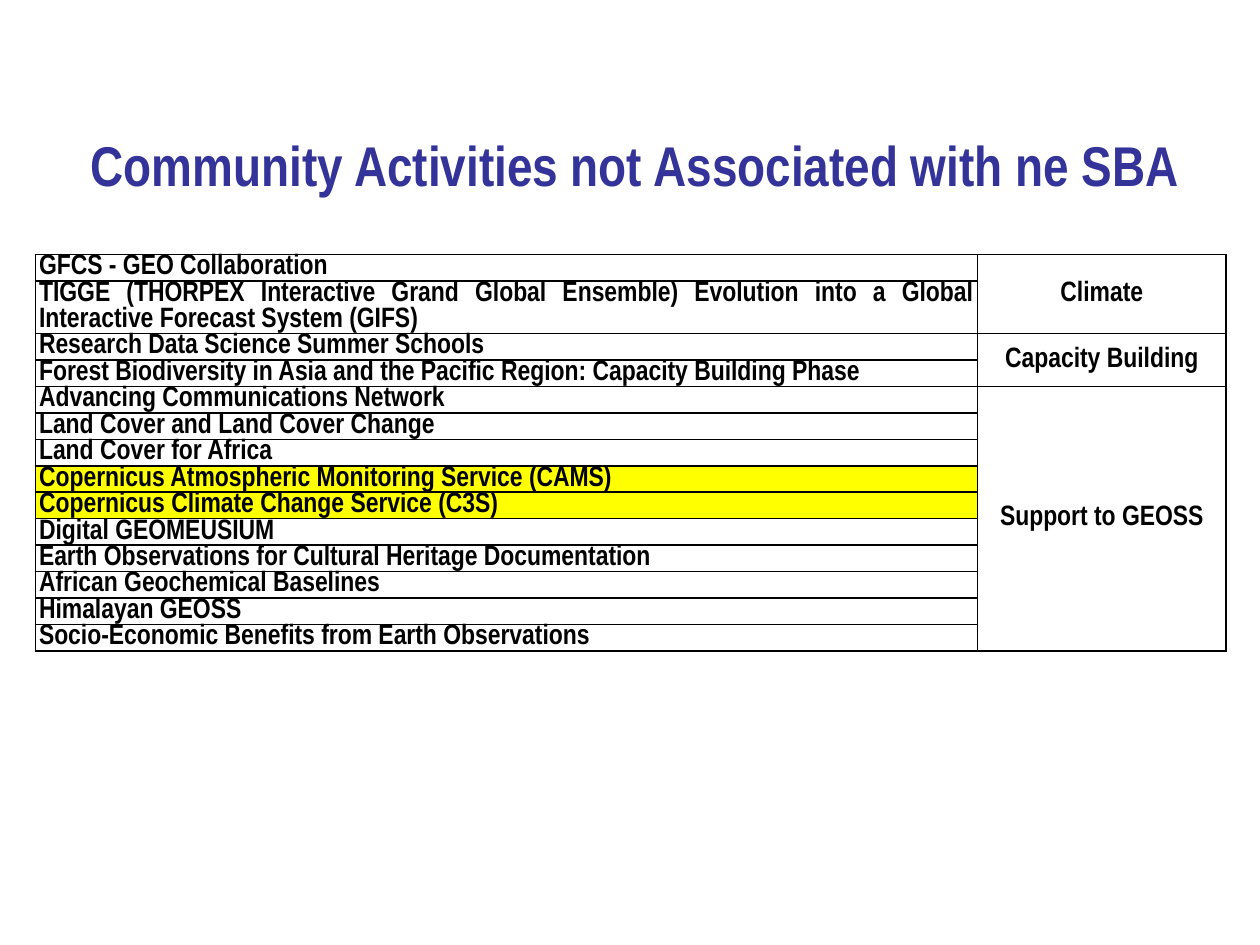
import pptx
import pptx.util
import pptx.dml.color
import pptx.enum.text
import pptx.oxml
import pptx.oxml.ns
from dataclasses import dataclass

Inches = pptx.util.Inches
Align = pptx.enum.text.PP_ALIGN
Anchor = pptx.enum.text.MSO_ANCHOR


@dataclass(frozen=True)
class Theme:
    font: str = "Arial Narrow"
    title: str = "333399"
    ink: str = "000000"
    plain: str = "FFFFFF"
    highlight: str = "FFFF00"
    title_size: int = 32
    cell_size: int = 16
    border: int = 1


theme = Theme()


def write(frame, text, align, size, color):
    para = frame.paragraphs[0]
    para.alignment = align
    span = para.add_run()
    span.text = text
    span.font.name = theme.font
    span.font.size = pptx.util.Pt(size)
    span.font.bold = True
    span.font.color.rgb = pptx.dml.color.RGBColor.from_string(color)


def style_cell(cell, fill):
    cell.margin_left = cell.margin_right = Inches(0.03)
    cell.margin_top = cell.margin_bottom = 0
    cell.fill.solid()
    cell.fill.fore_color.rgb = pptx.dml.color.RGBColor.from_string(fill)
    properties = cell._tc.get_or_add_tcPr()
    for position, side in enumerate(("lnL", "lnR", "lnT", "lnB")):
        line = pptx.oxml.parse_xml(
            f'<a:{side} {pptx.oxml.ns.nsdecls("a")} w="{pptx.util.Pt(theme.border)}">'
            f'<a:solidFill><a:srgbClr val="{theme.ink}"/></a:solidFill></a:{side}>'
        )
        properties.insert(position, line)


groups = [
    ("Climate", [
        ("GFCS - GEO Collaboration", Align.LEFT),
        ("TIGGE (THORPEX Interactive Grand Global Ensemble) Evolution into a Global "
         "Interactive Forecast System (GIFS)", Align.JUSTIFY),
    ]),
    ("Capacity Building", [
        ("Research Data Science Summer Schools", Align.JUSTIFY),
        ("Forest Biodiversity in Asia and the Pacific Region: Capacity Building Phase", Align.LEFT),
    ]),
    ("Support to GEOSS", [
        ("Advancing Communications Network", Align.JUSTIFY),
        ("Land Cover and Land Cover Change", Align.LEFT),
        ("Land Cover for Africa", Align.JUSTIFY),
        ("Copernicus Atmospheric Monitoring Service (CAMS)", Align.JUSTIFY),
        ("Copernicus Climate Change Service (C3S)", Align.JUSTIFY),
        ("Digital GEOMEUSIUM", Align.JUSTIFY),
        ("Earth Observations for Cultural Heritage Documentation", Align.JUSTIFY),
        ("African Geochemical Baselines", Align.JUSTIFY),
        ("Himalayan GEOSS", Align.LEFT),
        ("Socio-Economic Benefits from Earth Observations", Align.LEFT),
    ]),
]

deck = pptx.Presentation()
deck.slide_width = Inches(10)
deck.slide_height = Inches(7.5)
slide = deck.slides.add_slide(deck.slide_layouts[5])

title = slide.shapes.title
title.left, title.top = Inches(0.42), Inches(1.05)
title.width, title.height = Inches(9.25), Inches(0.5)
title.text_frame.word_wrap = True
title.text_frame.vertical_anchor = Anchor.MIDDLE
write(title.text_frame, "Community Activities not Associated with ne SBA",
      Align.CENTER, theme.title_size, theme.title)

row_count = sum(len(activities) for _, activities in groups)
row_height = Inches(0.21)
table = slide.shapes.add_table(row_count, 2, Inches(0.28), Inches(2.02),
                               Inches(9.45), row_height * row_count).table
table.first_row = False
table.horz_banding = False
table.columns[0].width = Inches(7.48)
table.columns[1].width = Inches(1.97)

row = 0
for area, activities in groups:
    area_cell = table.cell(row, 1)
    area_cell.merge(table.cell(row + len(activities) - 1, 1))
    area_cell.vertical_anchor = Anchor.MIDDLE
    write(area_cell.text_frame, area, Align.CENTER, theme.cell_size, theme.ink)
    for activity, align in activities:
        fill = theme.highlight if activity.startswith("Copernicus") else theme.plain
        table.rows[row].height = row_height
        style_cell(table.cell(row, 0), fill)
        style_cell(table.cell(row, 1), theme.plain)
        write(table.cell(row, 0).text_frame, activity, align, theme.cell_size, theme.ink)
        row += 1

deck.save("out.pptx")
